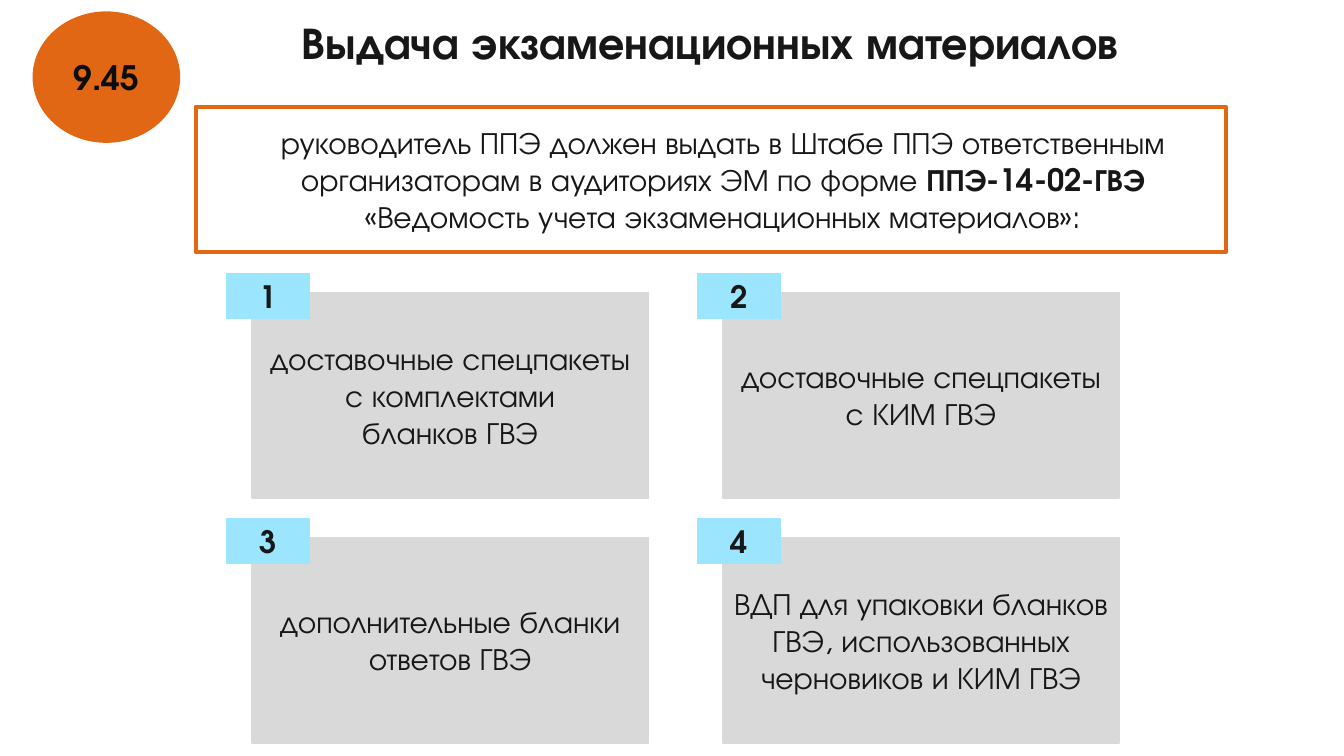
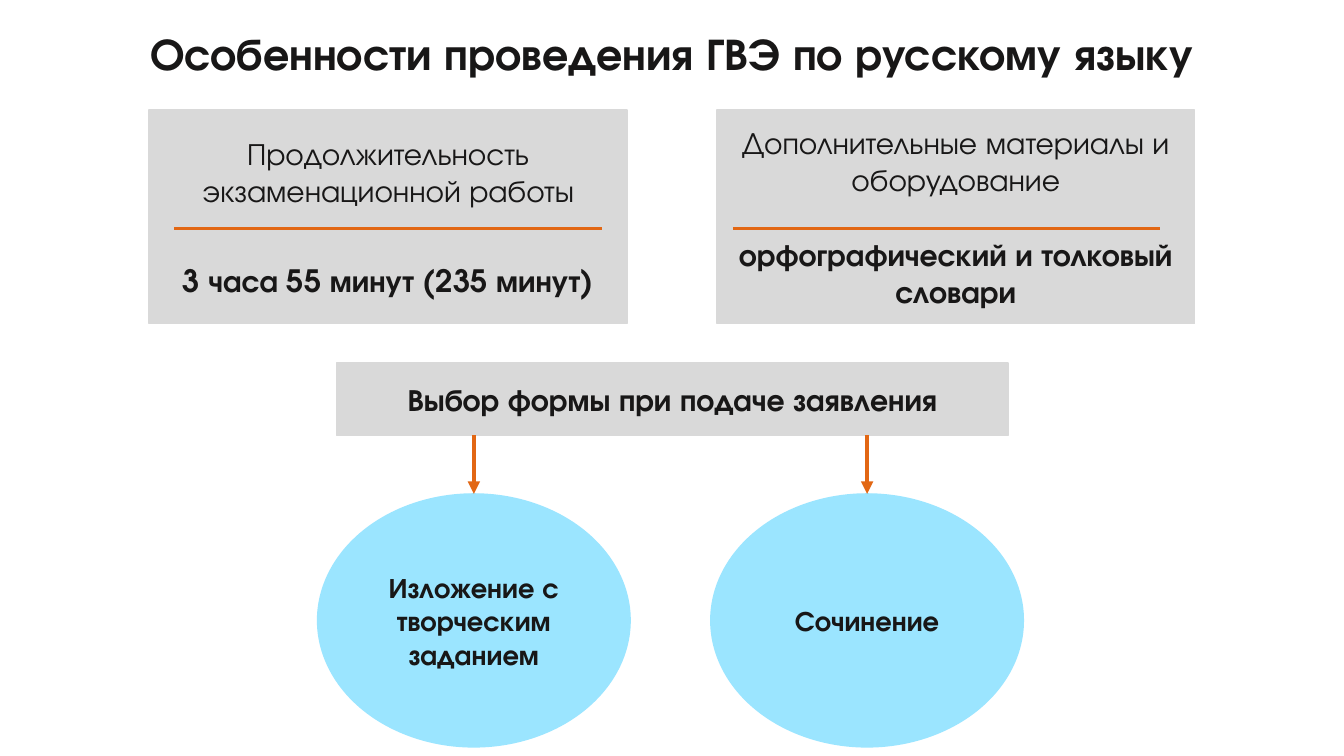
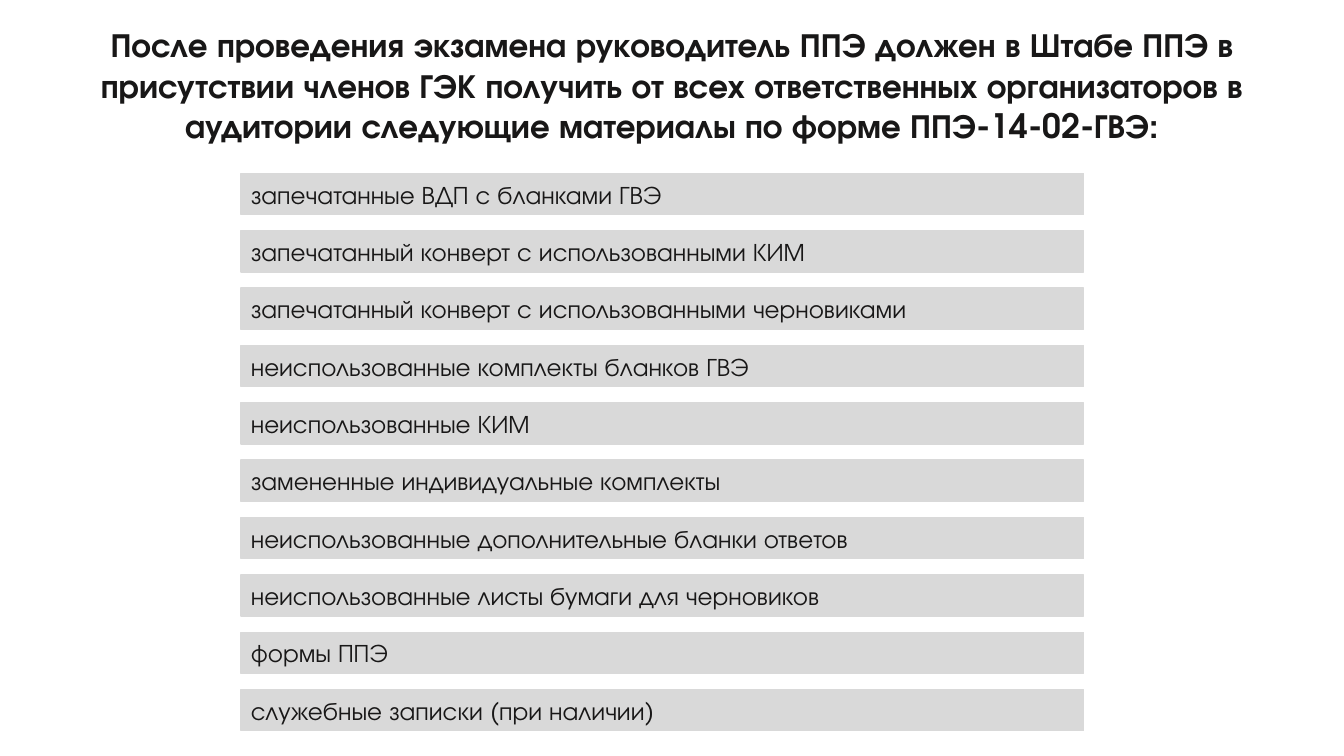
import dataclasses
import typing

import lxml.etree
import pptx
import pptx.dml.color
import pptx.enum.shapes
import pptx.enum.text
import pptx.oxml.ns
import pptx.util

Inches = pptx.util.Inches
Pt = pptx.util.Pt
Kind = pptx.enum.shapes.MSO_SHAPE
Align = pptx.enum.text.PP_ALIGN
Anchor = pptx.enum.text.MSO_ANCHOR


@dataclasses.dataclass(frozen=True)
class Theme:
    """Colours, font and type sizes of the deck."""
    ink: str = "181717"
    dark: str = "0D0D0D"
    gray: str = "D9D9D9"
    blue: str = "9BE5FF"
    orange: str = "E26714"
    font: str = "TeX Gyre Adventor"
    title: int = 32
    head: int = 24
    body: int = 22
    oval: int = 20
    row: int = 18


class Box(typing.NamedTuple):
    """A region in inches."""
    x: float
    y: float
    w: float
    h: float

    def inner(self, dx, dy, w, h):
        """Return a region offset from this one."""
        return Box(self.x + dx, self.y + dy, w, h)


THEME = Theme()


def tint(code):
    """Return a colour object for a hex code."""
    return pptx.dml.color.RGBColor.from_string(code)


def apply(item, form):
    """Set the attributes of an item from a dict."""
    for name, value in form.items():
        setattr(item, name, value)


def write(frame, paras, size, bold=False, color=THEME.ink, align=Align.CENTER,
          anchor=Anchor.MIDDLE, before=0, gap=0):
    """Write paragraphs of (text, bold) runs; plain text takes the default weight."""
    apply(frame, {"word_wrap": True, "vertical_anchor": anchor,
                  "auto_size": pptx.enum.text.MSO_AUTO_SIZE.NONE})
    for i, runs in enumerate(paras):
        para = frame.paragraphs[0] if i == 0 else frame.add_paragraph()
        last = i == len(paras) - 1
        apply(para, {"alignment": align,
                     "space_before": Pt(0 if i else before),
                     "space_after": Pt(0 if last else gap)})
        for text, heavy in [(runs, bold)] if isinstance(runs, str) else runs:
            run = para.add_run()
            run.text = text
            apply(run.font, {"name": THEME.font, "size": Pt(size), "bold": heavy})
            run.font.color.rgb = tint(color)


def shape(slide, box, color, kind=Kind.RECTANGLE, hollow=False):
    """Add a flat shape, filled or with a thick outline only."""
    item = slide.shapes.add_shape(kind, *map(Inches, box))
    item.shadow.inherit = False
    if hollow:
        item.fill.background()
    else:
        item.fill.solid()
        item.fill.fore_color.rgb = tint(color)
    item.line.color.rgb = tint(color)
    item.line.width = Pt(3 if hollow else 1)
    return item


def line(slide, start, end, width):
    """Add a straight orange line."""
    item = slide.shapes.add_connector(
        pptx.enum.shapes.MSO_CONNECTOR.STRAIGHT, *map(Inches, (*start, *end)))
    item.line.color.rgb = tint(THEME.orange)
    item.line.width = Pt(width)
    lxml.etree.SubElement(item.element.spPr, pptx.oxml.ns.qn("a:effectLst"))
    return item


def page(deck, box, text, size=THEME.title):
    """Add a slide with its title in the given box."""
    slide = deck.slides.add_slide(deck.slide_layouts[5])
    title = slide.shapes.title
    apply(title, dict(zip(("left", "top", "width", "height"), map(Inches, box))))
    write(title.text_frame, [text], size, bold=True, anchor=Anchor.TOP)
    return slide


def badge(slide, box, text):
    """Add the orange oval with the time."""
    item = shape(slide, box, THEME.orange, Kind.OVAL)
    write(item.text_frame, [text], THEME.head, bold=True, color=THEME.dark)


def notice(slide, box, runs):
    """Add the outlined box with the main rule."""
    item = shape(slide, box, THEME.orange, hollow=True)
    item.text_frame.margin_left = Inches(0.34)
    write(item.text_frame, [runs], THEME.body)


def grid(slide, box, cards, cols=2, gap=(0.74, 0.39)):
    """Add numbered cards in an even grid that fills the box."""
    rows = -(-len(cards) // cols)
    wide = (box.w - gap[0] * (cols - 1)) / cols
    high = (box.h - gap[1] * (rows - 1)) / rows
    for i, paras in enumerate(cards):
        row, col = divmod(i, cols)
        card = box.inner(col * (wide + gap[0]), row * (high + gap[1]), wide, high)
        write(shape(slide, card, THEME.gray).text_frame, paras, THEME.body)
        tag = shape(slide, card.inner(-0.25, -0.18, 0.82, 0.44), THEME.blue)
        write(tag.text_frame, [str(i + 1)], THEME.body, bold=True)


def fact(slide, box, label, value, gap, inset):
    """Add a card with a label, a divider and a bold value."""
    card = shape(slide, box, THEME.gray)
    write(card.text_frame, [label, [(value, True)]], THEME.body, before=6, gap=gap)
    rule = box.inner(inset, 1.18, 4.24, 0)
    line(slide, (rule.x, rule.y), (rule.x + rule.w, rule.y), 2)


def choice(slide, box, text, names):
    """Add a bar with arrows down to one oval for each option."""
    bar = box.inner(0.19, 0, 6.66, 0.72)
    item = shape(slide, bar, THEME.gray)
    write(item.text_frame, [text], THEME.body, bold=True, before=6)
    wide, drop = 3.1, 1.3
    step = (box.w - wide) / (len(names) - 1)
    for i, name in enumerate(names):
        spot = box.inner(i * step, drop, wide, box.h - drop)
        oval = shape(slide, spot, THEME.blue, Kind.OVAL)
        write(oval.text_frame, [name], THEME.oval, bold=True)
        mid = spot.x + wide / 2
        arrow = line(slide, (mid, bar.y + bar.h), (mid, spot.y), 3)
        arrow.end_connect(oval, 0)
        lxml.etree.SubElement(arrow.element.spPr.get_or_add_ln(),
                              pptx.oxml.ns.qn("a:tailEnd"), type="triangle")


def stack(slide, box, names, gap=0.16):
    """Add equal rows with text, spread down the box."""
    high = (box.h - gap * (len(names) - 1)) / len(names)
    for i, name in enumerate(names):
        row = shape(slide, box.inner(0, i * (high + gap), box.w, high), THEME.gray)
        write(row.text_frame, [name], THEME.row, align=Align.LEFT)


def issue(deck):
    """Build the slide on handing out materials."""
    slide = page(deck, Box(2.48, 0.1, 9.13, 0.64), "Выдача экзаменационных материалов")
    grid(slide, Box(2.5, 2.9, 8.6, 4.47), [
        ["доставочные спецпакеты с комплектами", "бланков ГВЭ"],
        ["доставочные спецпакеты с КИМ ГВЭ"],
        ["дополнительные бланки ответов ГВЭ"],
        ["ВДП для упаковки бланков ГВЭ, использованных черновиков и КИМ ГВЭ"],
    ])
    badge(slide, Box(0.33, 0.12, 1.45, 1.29), "9.45")
    notice(slide, Box(1.94, 1.06, 10.22, 1.44), [
        ("руководитель ППЭ должен выдать в Штабе ППЭ ответственным "
         "организаторам в аудиториях ЭМ по форме ", False),
        ("ППЭ-14-02-ГВЭ ", True),
        ("«Ведомость учета экзаменационных материалов»:", False),
    ])


def exam(deck):
    """Build the slide on the Russian language exam."""
    slide = page(deck, Box(0.62, 0.2, 12.09, 0.64),
                 "Особенности проведения ГВЭ по русскому языку")
    fact(slide, Box(1.48, 1.09, 4.74, 2.12), "Продолжительность экзаменационной работы",
         "3 часа 55 минут (235 минут)", 38, 0.25)
    fact(slide, Box(7.11, 1.09, 4.74, 2.12), "Дополнительные материалы и оборудование",
         "орфографический и толковый словари", 27, 0.16)
    choice(slide, Box(3.15, 3.6, 7, 3.81), "Выбор формы при подаче заявления",
           ["Изложение с творческим заданием", "Сочинение"])


def collect(deck):
    """Build the slide on taking materials back."""
    slide = page(deck, Box(0.07, 0.19, 13.19, 1.31),
                 "После проведения экзамена руководитель ППЭ должен в Штабе ППЭ "
                 "в присутствии членов ГЭК получить от всех ответственных "
                 "организаторов в аудитории следующие материалы по форме "
                 "ППЭ-14-02-ГВЭ:", THEME.head)
    stack(slide, Box(2.39, 1.72, 8.36, 5.53), [
        "запечатанные ВДП с бланками ГВЭ",
        "запечатанный конверт с использованными КИМ",
        "запечатанный конверт с использованными черновиками",
        "неиспользованные комплекты бланков ГВЭ",
        "неиспользованные КИМ",
        "замененные индивидуальные комплекты",
        "неиспользованные дополнительные бланки ответов",
        "неиспользованные листы бумаги для черновиков",
        "формы ППЭ",
        "служебные записки (при наличии)",
    ])


def main():
    """Build and save the deck."""
    deck = pptx.Presentation()
    apply(deck, {"slide_width": Inches(13.33), "slide_height": Inches(7.5)})
    for build in (issue, exam, collect):
        build(deck)
    deck.save("out.pptx")


if __name__ == "__main__":
    main()
